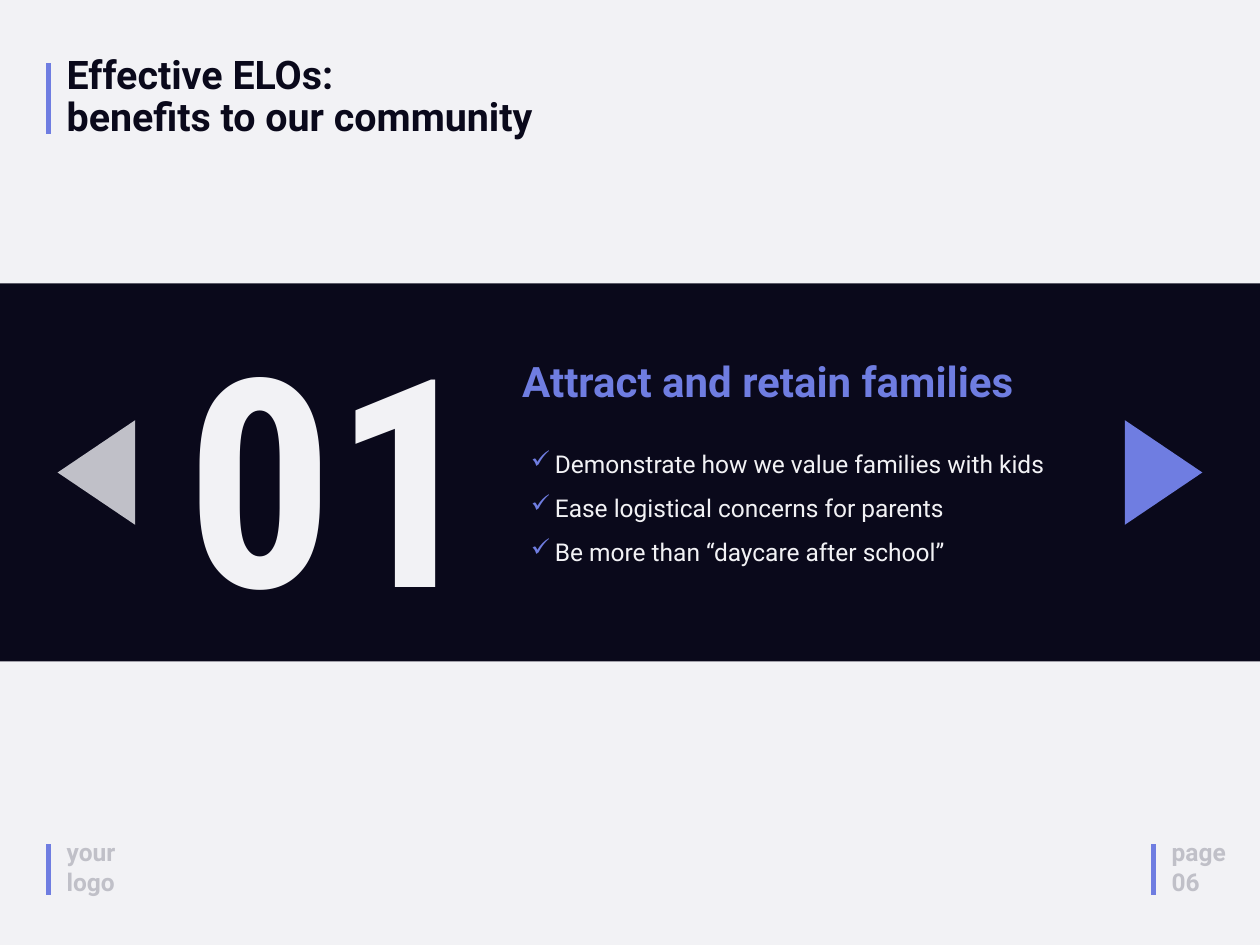
import pptx
import pptx.dml.color
import pptx.enum.shapes
import pptx.oxml
import pptx.oxml.ns
import pptx.util

Inches = pptx.util.Inches
Pt = pptx.util.Pt
MSO_SHAPE = pptx.enum.shapes.MSO_SHAPE

COLORS = {
    "paper": "F2F2F5",
    "ink": "0A091B",
    "accent": "6F7DE1",
    "muted": "C0C0C8",
}


def rgb(color):
    """Return the named colour."""
    return pptx.dml.color.RGBColor.from_string(COLORS[color])


def add_text(slide, text, box, size, color, font="Roboto", bold=True, spacing=None, bullet=None):
    """Write one paragraph per line of text, optionally with hanging bullets."""
    frame = slide.shapes.add_textbox(*map(Inches, box)).text_frame
    frame.word_wrap = True
    frame.text = text
    for paragraph in frame.paragraphs:
        paragraph.line_spacing = spacing
        for run in paragraph.runs:
            run.font.name = font
            run.font.size = Pt(size)
            run.font.bold = bold
            run.font.color.rgb = rgb(color)
        if bullet:
            add_bullet(paragraph, bullet)


def add_bullet(paragraph, mark):
    """Hang an accent-coloured mark in front of a paragraph."""
    properties = paragraph._p.get_or_add_pPr()
    indent = Inches(0.38)
    properties.set("marL", str(indent))
    properties.set("indent", str(-indent))
    namespace = pptx.oxml.ns.nsdecls("a")
    for markup in (
        f'<a:buClr {namespace}><a:srgbClr val="{COLORS["accent"]}"/></a:buClr>',
        f'<a:buChar {namespace} char="{mark}"/>',
    ):
        properties.append(pptx.oxml.parse_xml(markup))


def add_filled(slide, preset, box, color, rotation=0):
    """Draw a flat preset shape without outline."""
    shape = slide.shapes.add_shape(preset, *map(Inches, box))
    shape.shadow.inherit = False
    shape.fill.solid()
    shape.fill.fore_color.rgb = rgb(color)
    shape.line.fill.background()
    shape.rotation = rotation


def add_marked_text(slide, box, bar_top, bar_height, text, size, color, spacing=None):
    """Place text with a vertical accent bar just left of its box."""
    left, top = box[:2]
    x, y = left - 0.19, top + bar_top
    bar = slide.shapes.add_connector(
        pptx.enum.shapes.MSO_CONNECTOR.STRAIGHT, *map(Inches, (x, y, x, y + bar_height))
    )
    bar.line.color.rgb = rgb("accent")
    bar.line.width = Pt(5)
    bar._element.spPr.append(pptx.oxml.parse_xml(f'<a:effectLst {pptx.oxml.ns.nsdecls("a")}/>'))
    add_text(slide, text, box, size, color, spacing=spacing)


def add_benefit_band(slide, box, number, heading, points):
    """Build the dark band with its number, benefit and navigation arrows."""
    left, top, width, height = box
    add_filled(slide, MSO_SHAPE.RECTANGLE, box, "ink")
    add_text(slide, number, (left + 2.86, top + 0.15, 5.96, 5.71), 333, "paper",
             font="Roboto Condensed")
    add_text(slide, heading, (left + 8.19, top + 1.09, 9.39, 0.91), 48, "accent")
    add_text(slide, "\n".join(points), (left + 8.33, top + 2.34, 8.42, 2.13), 28, "paper",
             bold=False, spacing=1.5, bullet="✓")
    arrow_width, arrow_height, margin = 1.66, 1.23, 0.7
    arrow_top = top + (height - arrow_height) / 2
    for arrow_left, color, rotation in (
        (left + margin, "muted", 270),
        (left + width - margin - arrow_width, "accent", 90),
    ):
        add_filled(slide, MSO_SHAPE.ISOSCELES_TRIANGLE,
                   (arrow_left, arrow_top, arrow_width, arrow_height), color, rotation)


def add_footer(slide, box):
    """Place the logo label and the page number at the two ends of the footer."""
    left, top, width, height = box
    for label_left, label_width, label in (
        (left, 1.19, "your logo"),
        (left + width - 1.5, 1.5, "page\n06"),
    ):
        add_marked_text(slide, (label_left, top, label_width, height), 0.16, 0.81,
                        label, 28, "muted")


def main():
    """Build and save the slide."""
    deck = pptx.Presentation()
    deck.slide_width, deck.slide_height = Inches(20), Inches(15)
    slide = deck.slides.add_slide(deck.slide_layouts[6])
    slide.background.fill.solid()
    slide.background.fill.fore_color.rgb = rgb("paper")
    add_marked_text(slide, (0.96, 0.83, 9.46, 1.46), 0.17, 1.13,
                    "Effective ELOs:\nbenefits to our community", 45, "ink", spacing=0.9)
    add_benefit_band(slide, (0, 4.5, 20, 6), "01", "Attract and retain families", (
        "Demonstrate how we value families with kids",
        "Ease logistical concerns for parents",
        "Be more than “daycare after school”",
    ))
    add_footer(slide, (0.96, 13.24, 19.04, 1.04))
    deck.save("out.pptx")


if __name__ == "__main__":
    main()
